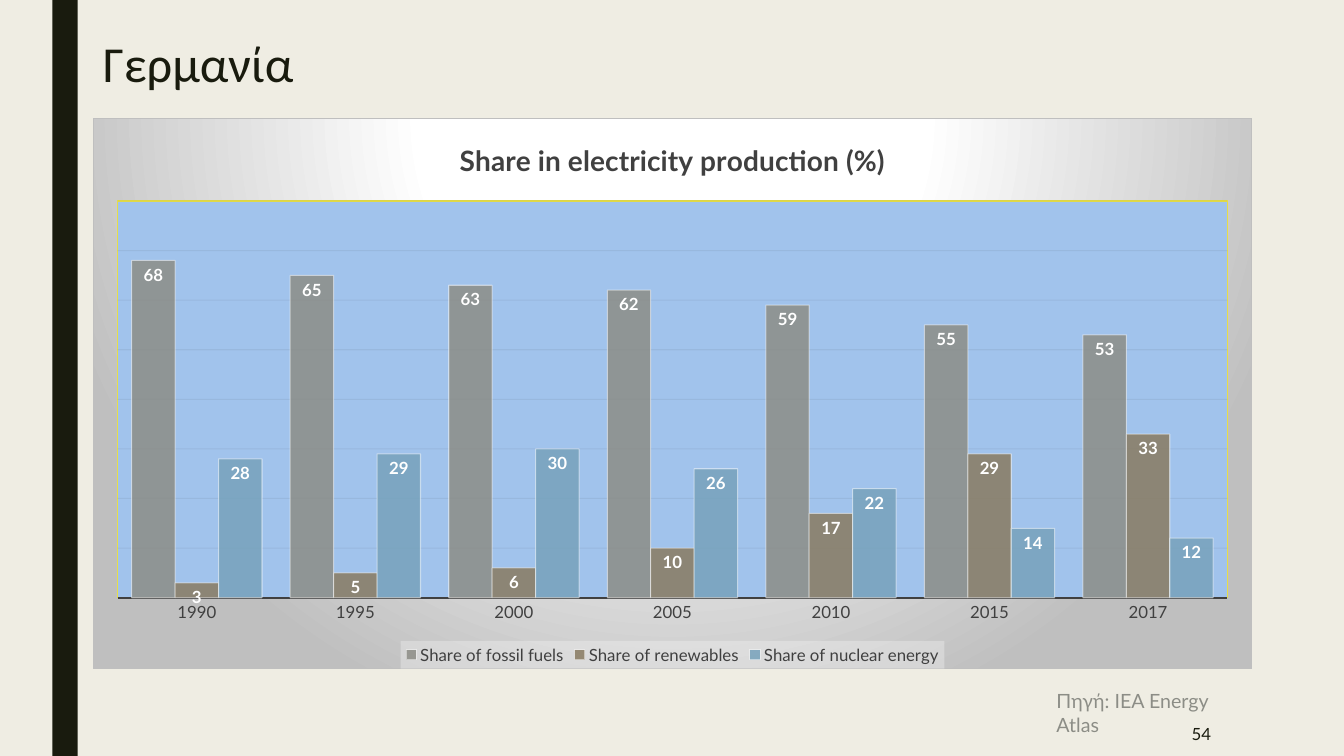
"""Build the slide on Germany's electricity production shares."""
import pptx
import pptx.chart.data
import pptx.dml.color
import pptx.enum.chart
import pptx.enum.shapes
import pptx.enum.text
import pptx.oxml
import pptx.oxml.ns
import pptx.util

RGBColor = pptx.dml.color.RGBColor
Inches = pptx.util.Inches
Pt = pptx.util.Pt
qn = pptx.oxml.ns.qn

TITLE = "Γερμανία"
SOURCE = "Πηγή: IEA Energy Atlas"
SLIDE_NUMBER = "54"
CHART_TITLE = "Share in electricity production (%)"
YEARS = ["1990", "1995", "2000", "2005", "2010", "2015", "2017"]

CREAM = RGBColor(0xEF, 0xED, 0xE3)
INK = RGBColor(0x19, 0x1B, 0x0E)
GRAY = RGBColor(0x8C, 0x8D, 0x86)
BROWN = RGBColor(0x89, 0x7B, 0x61)
BLUE = RGBColor(0x77, 0xA2, 0xBB)
WHITE = RGBColor(0xFF, 0xFF, 0xFF)
CHARCOAL = RGBColor(0x40, 0x40, 0x40)
BLACK = RGBColor(0x0D, 0x0D, 0x0D)
SILVER = RGBColor(0xBF, 0xBF, 0xBF)
SKY = RGBColor(0xA1, 0xC3, 0xEC)
YELLOW = RGBColor(0xE6, 0xDE, 0x4A)
PALE = RGBColor(0xF2, 0xF2, 0xF2)

SERIES = [
    ("Share of fossil fuels", [68, 65, 63, 62, 59, 55, 53], GRAY),
    ("Share of renewables", [3, 5, 6, 10, 17, 29, 33], BROWN),
    ("Share of nuclear energy", [28, 29, 30, 26, 22, 14, 12], BLUE),
]

WIDTH, HEIGHT = 13.33, 7.5
LEFT, CONTENT_WIDTH = 0.92, 11.5
CHART_TOP, CHART_HEIGHT = 1.17, 5.47
PLOT_SHARES = {"x": 0.021, "y": 0.15, "w": 0.958, "h": 0.721}
NAMESPACES = pptx.oxml.ns.nsdecls("c", "a")


def style_font(font, size, color, name="Lato", bold=False):
    font.size, font.name, font.bold = Pt(size), name, bold
    font.color.rgb = color


def write_text(frame, text, size=14, color=INK, name="Lato", align=None,
               anchor=pptx.enum.text.MSO_ANCHOR.TOP, spacing=None):
    frame.word_wrap = True
    frame.vertical_anchor = anchor
    paragraph = frame.paragraphs[0]
    paragraph.alignment = align
    paragraph.line_spacing = spacing
    run = paragraph.add_run()
    run.text = text
    style_font(run.font, size, color, name)


def set_opacity(element, percent):
    for color in element.iter(qn("a:srgbClr")):
        alpha = color.makeelement(qn("a:alpha"), {"val": str(percent * 1000)})
        color.append(alpha)


def solid_fill(color, opacity=100):
    return (f'<a:solidFill><a:srgbClr val="{color}"><a:alpha val="{opacity * 1000}"/>'
            "</a:srgbClr></a:solidFill>")


def area_format(fill, border=None):
    line = solid_fill(border) if border else "<a:noFill/>"
    return pptx.oxml.parse_xml(
        f'<c:spPr {NAMESPACES}>{fill}<a:ln w="{Pt(0.75)}">{line}</a:ln></c:spPr>')


def radial_fill(stops):
    marks = "".join(f'<a:gs pos="{position * 1000}"><a:srgbClr val="{color}"/></a:gs>'
                    for position, color in stops)
    return (f'<a:gradFill><a:gsLst>{marks}</a:gsLst><a:path path="circle">'
            '<a:fillToRect l="50000" t="-80000" r="50000" b="180000"/></a:path></a:gradFill>')


def format_areas(chart):
    chart_element = chart.element.find(qn("c:chart"))
    background = radial_fill([(0, WHITE), (39, WHITE), (100, SILVER)])
    chart_element.addnext(area_format(background, SILVER))

    plot_area = chart_element.find(qn("c:plotArea"))
    for layout in plot_area.findall(qn("c:layout")):
        plot_area.remove(layout)
    shares = "".join(f'<c:{key} val="{share}"/>' for key, share in PLOT_SHARES.items())
    plot_area.insert(0, pptx.oxml.parse_xml(
        f'<c:layout {NAMESPACES}><c:manualLayout><c:layoutTarget val="inner"/>'
        f'<c:xMode val="edge"/><c:yMode val="edge"/>{shares}</c:manualLayout></c:layout>'))
    plot_area.append(area_format(solid_fill(SKY), YELLOW))

    overlay = chart_element.find(qn("c:legend")).find(qn("c:overlay"))
    overlay.addnext(area_format(solid_fill(PALE, 39)))


def add_share_chart(slide):
    data = pptx.chart.data.CategoryChartData()
    data.categories = YEARS
    for name, values, _ in SERIES:
        data.add_series(name, values)
    chart = slide.shapes.add_chart(
        pptx.enum.chart.XL_CHART_TYPE.COLUMN_CLUSTERED, Inches(LEFT), Inches(CHART_TOP),
        Inches(CONTENT_WIDTH), Inches(CHART_HEIGHT), data).chart
    style_font(chart.font, 12, CHARCOAL)

    chart.has_title = True
    chart.chart_title.include_in_layout = False
    title_run = chart.chart_title.text_frame.paragraphs[0].add_run()
    title_run.text = CHART_TITLE
    style_font(title_run.font, 20, CHARCOAL, bold=True)

    chart.has_legend = True
    chart.legend.position = pptx.enum.chart.XL_LEGEND_POSITION.BOTTOM
    chart.legend.include_in_layout = False
    style_font(chart.legend.font, 12, CHARCOAL)

    category_axis, value_axis = chart.category_axis, chart.value_axis
    category_axis.major_tick_mark = pptx.enum.chart.XL_TICK_MARK.NONE
    category_axis.format.line.color.rgb = CHARCOAL
    category_axis.format.line.width = Pt(1.5)
    style_font(category_axis.tick_labels.font, 12, CHARCOAL)
    value_axis.minimum_scale, value_axis.maximum_scale = 0, 80
    value_axis.major_unit = 10
    value_axis.visible = False
    grid = value_axis.major_gridlines
    grid.format.line.color.rgb = BLACK
    grid.format.line.width = Pt(0.75)
    set_opacity(value_axis._element.find(qn("c:majorGridlines")), 5)

    plot = chart.plots[0]
    plot.vary_by_categories = False
    plot.gap_width, plot.overlap = 65, 0
    for series, (_, _, color) in zip(plot.series, SERIES):
        series.format.fill.solid()
        series.format.fill.fore_color.rgb = color
        properties = series._element.find(qn("c:spPr"))
        set_opacity(properties, 85)
        series.format.line.color.rgb = WHITE
        series.format.line.width = Pt(0.75)
        set_opacity(properties.find(qn("a:ln")), 50)
        labels = series.data_labels
        labels.show_value = True
        labels.position = pptx.enum.chart.XL_LABEL_POSITION.INSIDE_END
        style_font(labels.font, 12, WHITE, bold=True)
    format_areas(chart)


def main():
    presentation = pptx.Presentation()
    presentation.slide_width, presentation.slide_height = Inches(WIDTH), Inches(HEIGHT)
    slide = presentation.slides.add_slide(presentation.slide_layouts[5])
    slide.background.fill.solid()
    slide.background.fill.fore_color.rgb = CREAM

    bar = slide.shapes.add_shape(pptx.enum.shapes.MSO_SHAPE.RECTANGLE,
                                 Inches(0.52), 0, Inches(0.25), Inches(HEIGHT))
    bar.shadow.inherit = False
    bar.fill.solid()
    bar.fill.fore_color.rgb = INK
    bar.line.fill.background()

    title = slide.shapes.title
    title.left, title.top = Inches(LEFT), Inches(0.15)
    title.width, title.height = Inches(CONTENT_WIDTH), Inches(1.02)
    middle = pptx.enum.text.MSO_ANCHOR.MIDDLE
    write_text(title.text_frame, TITLE, size=36, name="Calibri", anchor=middle,
               align=pptx.enum.text.PP_ALIGN.LEFT, spacing=0.89)

    add_share_chart(slide)

    number = slide.shapes.add_textbox(Inches(10.36), Inches(7.06), Inches(1.75), Inches(0.44))
    write_text(number.text_frame, SLIDE_NUMBER, size=12, anchor=middle,
               align=pptx.enum.text.PP_ALIGN.RIGHT)
    source = slide.shapes.add_textbox(Inches(10.38), Inches(6.79), Inches(2.04), Inches(0.34))
    write_text(source.text_frame, SOURCE, color=GRAY)

    presentation.save("out.pptx")


if __name__ == "__main__":
    main()
